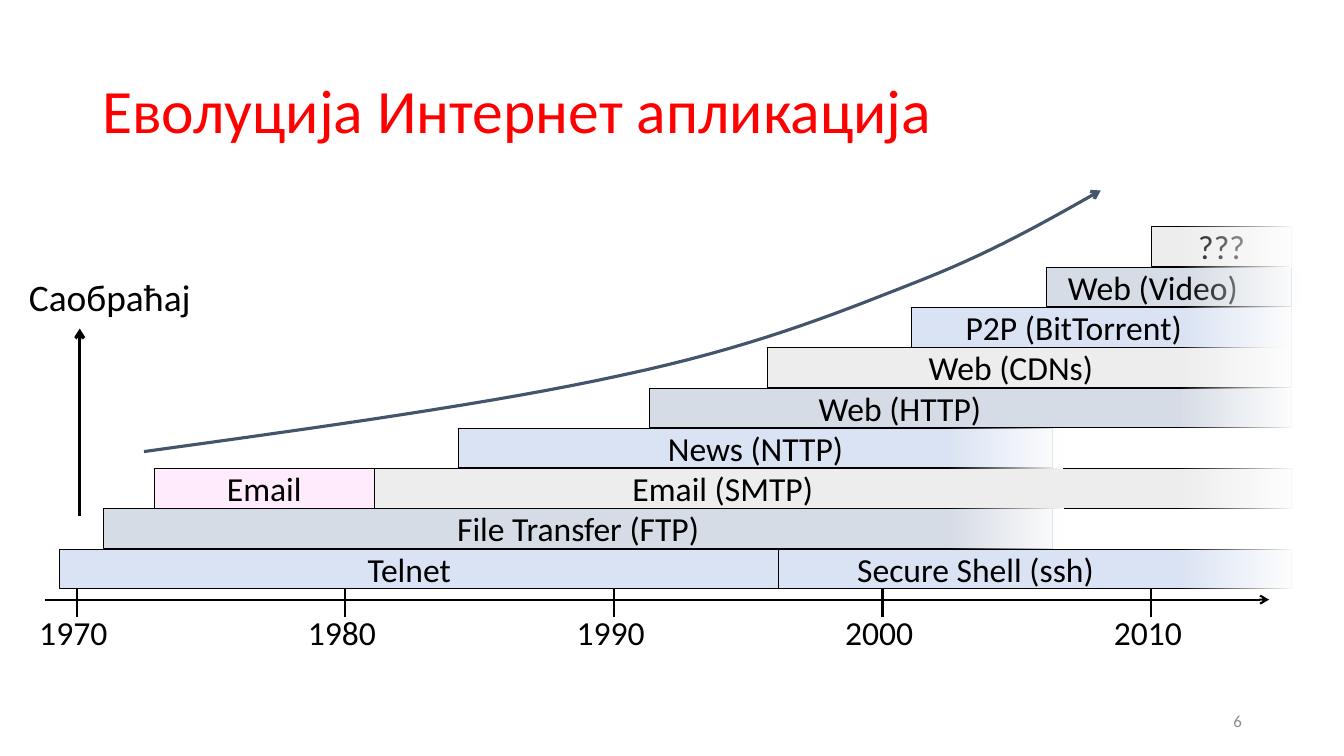
from lxml import etree
from pptx import Presentation
from pptx.dml.color import RGBColor
from pptx.enum.shapes import MSO_CONNECTOR, MSO_SHAPE
from pptx.enum.text import MSO_ANCHOR, PP_ALIGN
from pptx.oxml.ns import qn
from pptx.util import Cm, Pt

LEFT, CENTER, RIGHT = PP_ALIGN.LEFT, PP_ALIGN.CENTER, PP_ALIGN.RIGHT
TOP, MIDDLE = MSO_ANCHOR.TOP, MSO_ANCHOR.MIDDLE
RECTANGLE = MSO_SHAPE.RECTANGLE
STRAIGHT = MSO_CONNECTOR.STRAIGHT

FONT = "Calibri"
COLORS = {
    "title": "FF0000",
    "ink": "000000",
    "number": "8C8C8C",
    "curve": "44546A",
    "slate": "D6DCE5",
    "gray": "EDEDED",
    "blue": "DAE3F3",
    "pink": "FFEBFB",
    "white": "FFFFFF",
}

# All lengths below are in centimetres.
BOTTOM_ROW, TOP_ROW, LAST_ROW = 13.84, 5.72, 8
ROW_STEP = (BOTTOM_ROW - TOP_ROW) / LAST_ROW
BAR_HEIGHT = 1.0
ENDED, ONGOING = 26.52, 32.56
FIRST_TICK, DECADE = 1.93, 6.77

# Label, row from the bottom, left, right, fill, shift of the label from the bar's middle
ENDED_BARS = [
    ("File Transfer (FTP)", 1, 2.62, ENDED, "slate", 0),
    ("Email (SMTP)", 2, 6.99, ONGOING, "gray", -1.56),
    ("News (NTTP)", 3, 11.56, ENDED, "blue", 0),
]
ONGOING_BARS = [
    ("Secure Shell (ssh)", 0, 10.29, ONGOING, "blue", 3.16),
    ("Telnet", 0, 1.5, 19.61, "blue", -0.24),
    ("Email", 2, 3.89, 9.43, "pink", 0),
    ("Web (HTTP)", 4, 16.36, ONGOING, "slate", -1.78),
    ("Web (CDNs)", 5, 19.35, ONGOING, "gray", -0.48),
    ("P2P (BitTorrent)", 6, 22.96, ONGOING, "blue", -0.7),
    ("Web (Video)", 7, 26.37, ONGOING, "slate", -0.41),
    ("???", 8, 29.01, ONGOING, "gray", 0),
]
# Row, left
ENDED_FADES = [(3, 23.85), (1, 23.88)]
ONGOING_FADES = [(2, 29.67), (0, 29.67), (4, 29.67), (5, 29.74),
                 (6, 29.74), (7, 29.85), (8, 29.67)]

# Bézier control points; neighbouring segments share an end point
TRAFFIC_CURVE = [
    (3.63, 11.38), (8.05, 10.77), (12.47, 10.16), (15.7, 9.45),
    (18.92, 8.76), (20.96, 7.95), (22.96, 7.16),
    (24.94, 6.4), (26.34, 5.59), (27.74, 4.8),
]
CURVE_STEPS = 16


def rgb(name):
    return RGBColor.from_string(COLORS[name])


def row_top(row):
    return BOTTOM_ROW - row * ROW_STEP


def write(frame, text, size, color="ink", align=LEFT, anchor=TOP, spacing=0.8):
    frame.vertical_anchor = anchor
    para = frame.paragraphs[0]
    para.text = text
    para.alignment = align
    para.line_spacing = spacing
    para.font.name = FONT
    para.font.size = Pt(size)
    para.font.color.rgb = rgb(color)


def add_text(page, area, text, size, **style):
    box = page.shapes.add_textbox(*map(Cm, area))
    box.text_frame.word_wrap = True
    write(box.text_frame, text, size, **style)


def style_line(line, color, width, arrow=False):
    line.color.rgb = rgb(color)
    line.width = Pt(width)
    if arrow:
        outline = line._get_or_add_ln()
        etree.SubElement(outline, qn("a:tailEnd"), type="arrow")


def add_line(page, start, end, width, arrow=False):
    connector = page.shapes.add_connector(STRAIGHT, *map(Cm, start + end))
    style_line(connector.line, "ink", width, arrow)
    etree.SubElement(connector._element.spPr, qn("a:effectLst"))


def add_bar(page, label, row, left, right, fill, shift):
    bar = page.shapes.add_shape(RECTANGLE, Cm(left), Cm(row_top(row)),
                                Cm(right - left), Cm(BAR_HEIGHT))
    bar.shadow.inherit = False
    bar.fill.solid()
    bar.fill.fore_color.rgb = rgb(fill)
    style_line(bar.line, "ink", 0.75)
    frame = bar.text_frame
    frame.word_wrap = True
    frame.margin_left = Cm(max(0, 2 * shift))
    frame.margin_right = Cm(max(0, -2 * shift))
    frame.margin_top, frame.margin_bottom = Cm(0.18), Cm(0)
    write(frame, label, 24, align=CENTER)


def add_fade(page, row, left):
    """Cover the end of a bar with white that clears towards the left."""
    fade = page.shapes.add_shape(RECTANGLE, Cm(left), Cm(row_top(row)),
                                 Cm(2.92), Cm(1.02))
    fade.shadow.inherit = False
    fade.line.fill.background()
    fade.fill.gradient()
    fade.fill.gradient_angle = 180
    for stop in fade.fill.gradient_stops:
        stop.color.rgb = rgb("white")
    clear_color = list(fade._element.spPr.iter(qn("a:srgbClr")))[-1]
    etree.SubElement(clear_color, qn("a:alpha"), val="0")


def bezier_point(controls, t):
    weights = ((1 - t) ** 3, 3 * t * (1 - t) ** 2, 3 * t ** 2 * (1 - t), t ** 3)
    return tuple(Cm(sum(w * c for w, c in zip(weights, axis)))
                 for axis in zip(*controls))


def add_curve(page, controls):
    points = [bezier_point(controls[first:first + 4], step / CURVE_STEPS)
              for first in range(0, len(controls) - 1, 3)
              for step in range(1, CURVE_STEPS + 1)]
    start_x, start_y = map(Cm, controls[0])
    builder = page.shapes.build_freeform(start_x, start_y)
    builder.add_line_segments(points, close=False)
    curve = builder.convert_to_shape()
    curve.shadow.inherit = False
    curve.fill.background()
    style_line(curve.line, "curve", 2.25, arrow=True)


def add_time_axis(page):
    add_line(page, (1.14, 15.11), (31.98, 15.11), 1.5, arrow=True)
    for index in range(5):
        x = FIRST_TICK + index * DECADE
        add_line(page, (x, 14.68), (x, 15.54), 1.5)
        add_text(page, (x - 1.19, 15.49, 2.24, 1.07), str(1970 + 10 * index), 24)


def main():
    deck = Presentation()
    deck.slide_width, deck.slide_height = Cm(33.87), Cm(19.05)
    page = deck.slides.add_slide(deck.slide_layouts[6])

    add_text(page, (2.33, 1.02, 29.21, 3.68), "Еволуција Интернет апликација", 44,
             color="title", anchor=MIDDLE, spacing=0.9)
    add_time_axis(page)
    add_line(page, (2.01, 13.0), (2.01, 8.28), 2.25, arrow=True)
    add_text(page, (0.33, 6.99, 4.88, 1.17), "Саобраћај", 26.7, align=CENTER)

    for bars, fades in ((ENDED_BARS, ENDED_FADES), (ONGOING_BARS, ONGOING_FADES)):
        for bar in bars:
            add_bar(page, *bar)
        for fade in fades:
            add_fade(page, *fade)

    add_curve(page, TRAFFIC_CURVE)
    add_text(page, (23.93, 17.65, 7.62, 1.02), "6", 12, color="number",
             align=RIGHT, anchor=MIDDLE, spacing=1.0)
    deck.save("out.pptx")


if __name__ == "__main__":
    main()
